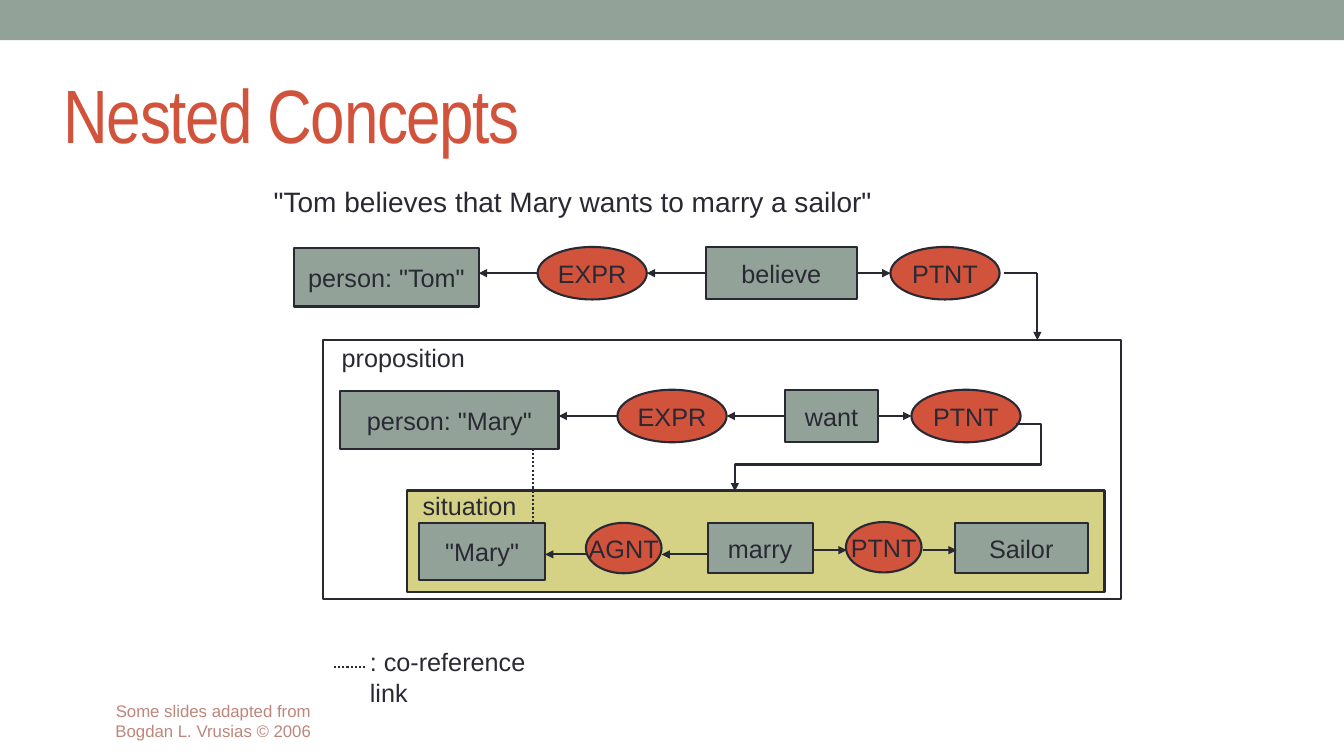
from lxml import etree
from pptx import Presentation
from pptx.dml.color import RGBColor
from pptx.enum.dml import MSO_LINE
from pptx.enum.shapes import MSO_CONNECTOR, MSO_SHAPE
from pptx.enum.text import MSO_ANCHOR, PP_ALIGN
from pptx.oxml.ns import qn
from pptx.util import Inches, Pt

RECT, OVAL = MSO_SHAPE.RECTANGLE, MSO_SHAPE.OVAL
STRAIGHT, ELBOW = MSO_CONNECTOR.STRAIGHT, MSO_CONNECTOR.ELBOW
LEFT, CENTER = PP_ALIGN.LEFT, PP_ALIGN.CENTER
TOP, MIDDLE = MSO_ANCHOR.TOP, MSO_ANCHOR.MIDDLE
DOTTED = MSO_LINE.ROUND_DOT
LEFT_SIDE, RIGHT_SIDE = 1, 3

INK = RGBColor(0x29, 0x29, 0x34)
SAGE = RGBColor(0x93, 0xA2, 0x99)
RUST = RGBColor(0xD2, 0x53, 0x3C)
OLIVE = RGBColor(0xD5, 0xD2, 0x86)
ROSE = RGBColor(0xBD, 0x86, 0x7C)

COLS, ROWS = 160, 90
SLIDE_W, SLIDE_H = Inches(13.33), Inches(7.5)

# Node sizes and gaps, in grid cells
NODE_H, PERSON_H, OVAL_W = 6.25, 7, 13
WIDE_GAP, NARROW_GAP = 7, 4


def gx(cols):
    return round(cols * SLIDE_W / COLS)


def gy(rows):
    return round(rows * SLIDE_H / ROWS)


def write(sp, text, size=18, color=INK, font="Arial", align=CENTER,
          anchor=MIDDLE, wrap=False):
    tf = sp.text_frame
    tf.word_wrap = wrap
    tf.vertical_anchor = anchor
    p = tf.paragraphs[0]
    p.alignment = align
    for i, line in enumerate(text.split("\n")):
        if i:
            p.add_line_break()
        r = p.add_run()
        r.text = line
        r.font.name = font
        r.font.size = Pt(size)
        r.font.color.rgb = color
    return p


def label(s, x, y, w, h, text, **style):
    sp = s.shapes.add_textbox(gx(x), gy(y), gx(w), gy(h))
    return write(sp, text, **style)


def node(s, kind, x, y, w, h, fill, text=None, outline=True):
    sp = s.shapes.add_shape(kind, gx(x), gy(y), gx(w), gy(h))
    sp.shadow.inherit = False
    if fill is None:
        sp.fill.background()
    else:
        sp.fill.solid()
        sp.fill.fore_color.rgb = fill
    if outline:
        sp.line.color.rgb = INK
        sp.line.width = Pt(1.5)
    else:
        sp.line.fill.background()
    if text:
        write(sp, text)
    return sp


def concept(s, x, y, w, h, text):
    return node(s, RECT, x, y, w, h, SAGE, text)


def relation(s, x, y, w, h, text):
    return node(s, OVAL, x, y, w, h, RUST, text)


def link(s, x1, y1, x2, y2, arrow=True, dash=None, kind=STRAIGHT):
    c = s.shapes.add_connector(kind, gx(x1), gy(y1), gx(x2), gy(y2))
    c.line.color.rgb = INK
    c.line.width = Pt(1.5)
    if dash:
        c.line.dash_style = dash
    if arrow:
        etree.SubElement(c.line._get_or_add_ln(), qn("a:tailEnd"), type="triangle")
    etree.SubElement(c._element.spPr, qn("a:effectLst"))
    return c


def bent_link(s, x1, y1, x2, y2, adjustments):
    """Four-part elbow arrow; adjustments are shares of its width and height."""
    c = link(s, x1, y1, x2, y2, kind=ELBOW)
    geom = c._element.spPr.find(qn("a:prstGeom"))
    geom.set("prst", "bentConnector4")
    guides = geom.find(qn("a:avLst"))
    if guides is None:
        guides = etree.SubElement(geom, qn("a:avLst"))
    for i, share in enumerate(adjustments, 1):
        etree.SubElement(guides, qn("a:gd"), name=f"adj{i}",
                         fmla=f"val {round(share * 100000)}")


def attitude_row(s, x, y, person, person_w, verb, verb_w):
    """person <- EXPR <- verb -> PTNT, from left to right."""
    person_right = x + person_w
    expr = person_right + WIDE_GAP
    verb_x = expr + OVAL_W + WIDE_GAP
    verb_right = verb_x + verb_w
    ptnt = verb_right + NARROW_GAP
    mid = y + NODE_H / 2
    concept(s, x, y + 0.1, person_w, PERSON_H, person)
    relation(s, expr, y, OVAL_W, NODE_H, "EXPR")
    verb_box = concept(s, verb_x, y, verb_w, NODE_H, verb)
    relation(s, ptnt, y, OVAL_W, NODE_H, "PTNT")
    link(s, expr, mid, person_right, mid)
    link(s, verb_x, mid, expr + OVAL_W, mid).begin_connect(verb_box, LEFT_SIDE)
    link(s, verb_right, mid, ptnt, mid).begin_connect(verb_box, RIGHT_SIDE)


def situation(s, x, y, w, h):
    node(s, RECT, x, y, w, h, OLIVE)
    top, left_y, right_y = y + 3.85, y + 7.6, y + 7.1
    concept(s, x + 1.4, top, 15, 6.75, '"Mary"')
    relation(s, x + 21.25, top, 9, 6, "AGNT")
    concept(s, x + 35.75, top, 12.5, 6, "marry")
    relation(s, x + 52.2, top - 0.1, 9, 6, "PTNT")
    concept(s, x + 65.15, top, 15.85, 6, "Sailor")
    for start, end, mid in ((21.25, 16.4, left_y), (35.75, 30.25, left_y),
                            (48.25, 52.3, right_y), (61.4, 65.4, right_y)):
        link(s, x + start, mid, x + end, mid)
    label(s, x - 2.2, y - 0.5, 19.2, 4.6, "situation")


def proposition(s, x, y, w, h):
    node(s, RECT, x, y, w, h, None)
    label(s, x + 1, y, 27, 4, "proposition", align=LEFT, wrap=True)
    attitude_row(s, x + 2, y + 5.9, 'person: "Mary"', 26, "want", 11)
    situation(s, x + 10, y + 17.9, 83, 12.1)
    bent_link(s, x + 82.45, y + 10, x + 49, y + 18, (-0.09, 0.6))
    link(s, x + 25, y + 12.9, x + 25, y + 21.9, arrow=False, dash=DOTTED)


def belief(s, x, y):
    attitude_row(s, x, y, 'person: "Tom"', 22, "believe", 18)
    mid, corner = y + 3.1, x + 88.5
    link(s, corner - 4, mid, corner, mid, arrow=False)
    link(s, corner, mid, corner, y + 11.1)


def legend(s, x, y):
    label(s, x + 3.35, y, 24.4, 4.8, ": co-reference link",
          align=LEFT, anchor=TOP, wrap=True)
    link(s, x + 4, y + 3, x, y + 3, arrow=False, dash=DOTTED)


def heading(s, x, y, w, h):
    node(s, RECT, 0, 0, COLS, 4.8, SAGE, outline=False)
    p = label(s, x, y, w, h, "Nested Concepts", size=54, color=RUST,
              font="Arial Narrow", align=LEFT, wrap=True)
    for r in p.runs:
        r.font._element.set("spc", "-100")


def main():
    prs = Presentation()
    prs.slide_width, prs.slide_height = SLIDE_W, SLIDE_H
    s = prs.slides.add_slide(prs.slide_layouts[6])
    heading(s, 6.4, 7, 73.7, 13)
    label(s, 31.4, 21.4, 108, 5, '"Tom believes that Mary wants to marry a sailor"',
          size=20, align=LEFT, anchor=TOP, wrap=True)
    belief(s, 35, 29.4)
    proposition(s, 38.5, 40.5, 95, 30.8)
    legend(s, 39.5, 76.4)
    label(s, 6.4, 83.4, 38, 4.8,
          "Some slides adapted from\nBogdan L. Vrusias © 2006",
          size=12, color=ROSE, wrap=True)
    prs.save("out.pptx")


if __name__ == "__main__":
    main()
